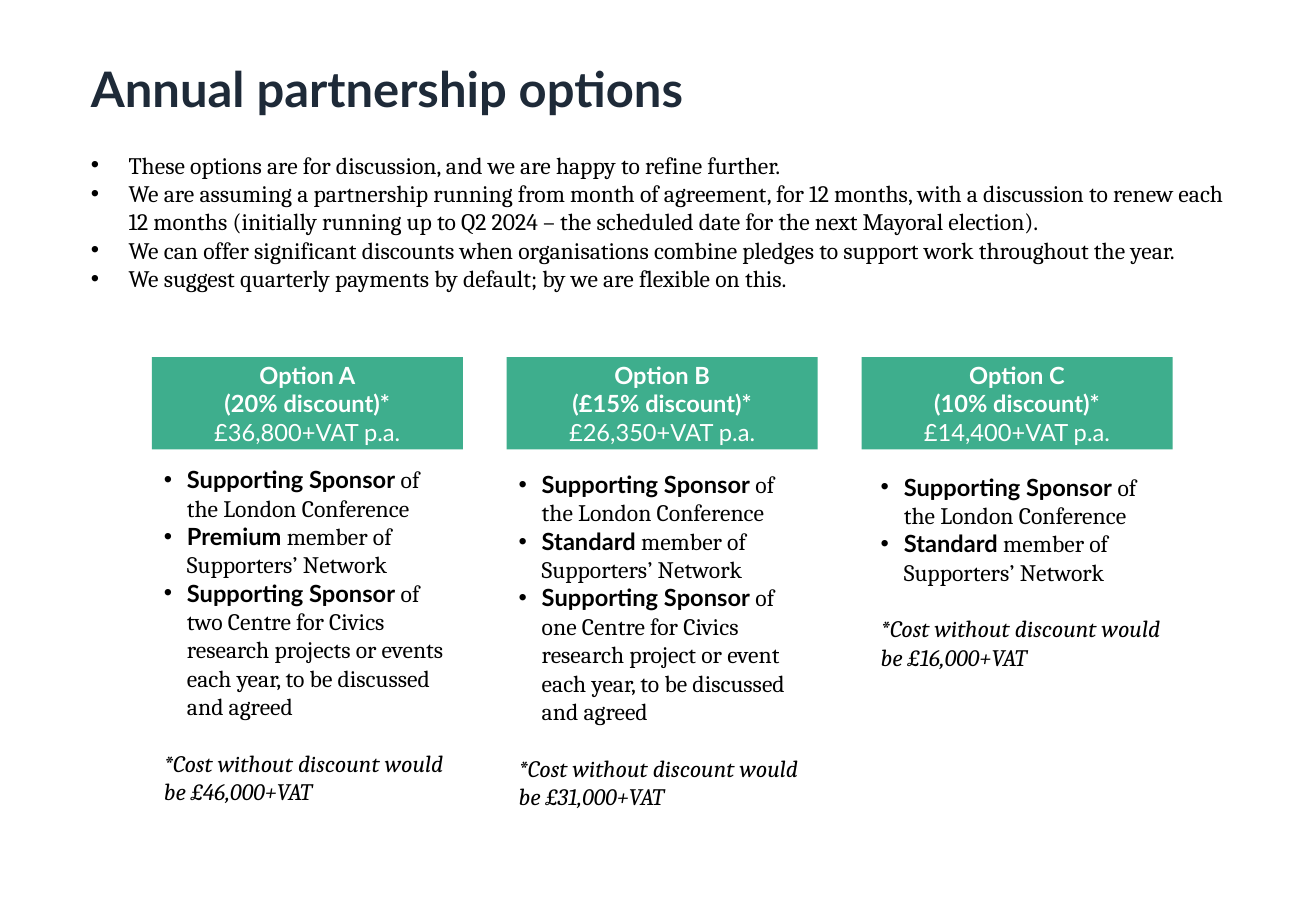
from pptx import Presentation
from pptx.dml.color import RGBColor as RGB
from pptx.enum.shapes import MSO_SHAPE as Shape
from pptx.enum.text import MSO_ANCHOR as Anchor, MSO_AUTO_SIZE as Fit, PP_ALIGN as Align
from pptx.oxml.ns import qn
from pptx.util import Inches, Pt

HEAD, BODY = "Lato", "Cambria"
GREEN, NAVY, BLACK, WHITE = "3EAE8D", "1E2A38", "000000", "FFFFFF"

TERMS = [
    "These options are for discussion, and we are happy to refine further.",
    "We are assuming a partnership running from month of agreement, for 12 months, "
    "with a discussion to renew each 12 months (initially running up to Q2 2024 – "
    "the scheduled date for the next Mayoral election).",
    "We can offer significant discounts when organisations combine pledges to "
    "support work throughout the year.",
    "We suggest quarterly payments by default; by we are flexible on this.",
]
OPTIONS = [
    ("Option A", "(20% discount)*", "£36,800", "£46,000", "Premium",
     "two Centre for Civics research projects or events", 1.25, 3.78, 2.93),
    ("Option B", "(£15% discount)*", "£26,350", "£31,000", "Standard",
     "one Centre for Civics research project or event", 4.17, 3.82, 2.93),
    ("Option C", "(10% discount)*", "£14,400", "£16,000", "Standard",
     "", 7.15, 3.84, 1.75),
]


def color(code):
    """Turn a hex string into a colour."""
    return RGB.from_string(code)


def add_run(para, text, face=BODY, size=14, ink=BLACK, bold=False, italic=False):
    """Add one styled run to a paragraph."""
    run = para.add_run()
    run.text = text
    font = run.font
    font.name, font.size, font.bold, font.italic = face, Pt(size), bold, italic
    font.color.rgb = color(ink)


def next_para(frame):
    """Return the empty first paragraph, or a new one."""
    first = frame.paragraphs[0]
    return frame.add_paragraph() if first.runs else first


def add_bullet(frame, indent):
    """Start a paragraph with a hanging bullet."""
    para = next_para(frame)
    props = para._p.get_or_add_pPr()
    props.set("marL", str(Inches(indent)))
    props.set("indent", str(-Inches(indent)))
    font = props.makeelement(qn("a:buFont"), {"typeface": "Arial"})
    mark = props.makeelement(qn("a:buChar"), {"char": "•"})
    props.extend([font, mark])
    return para


def add_box(slide, left, top, width, height):
    """Add a wrapping text box and return its frame."""
    box = slide.shapes.add_textbox(Inches(left), Inches(top), Inches(width), Inches(height))
    frame = box.text_frame
    frame.word_wrap = True
    return frame


def add_title(slide, text):
    """Add the slide heading."""
    frame = add_box(slide, 0.65, 0.4, 7.63, 0.61)
    frame.vertical_anchor = Anchor.MIDDLE
    para = next_para(frame)
    para.line_spacing = 1.07
    add_run(para, text, HEAD, 29, NAVY, True)


def add_terms(slide):
    """Add the list of general terms."""
    frame = add_box(slide, 0.65, 1.19, 9.66, 1.28)
    frame.auto_size = Fit.SHAPE_TO_FIT_TEXT
    for term in TERMS:
        add_run(add_bullet(frame, 0.31), term)


def add_banner(slide, left, lines):
    """Add a green header whose last line is not bold."""
    box = slide.shapes.add_shape(
        Shape.RECTANGLE, Inches(left), Inches(2.94), Inches(2.56), Inches(0.76))
    box.shadow.inherit = False
    box.fill.solid()
    box.fill.fore_color.rgb = color(GREEN)
    box.line.fill.background()
    frame = box.text_frame
    frame.word_wrap = True
    frame.vertical_anchor = Anchor.MIDDLE
    for line in lines:
        para = next_para(frame)
        para.alignment = Align.CENTER
        add_run(para, line, HEAD, ink=WHITE, bold=line != lines[-1])


def add_offer(slide, left, top, height, perks, note):
    """Add the perks of an option and its cost note."""
    frame = add_box(slide, left, top, 2.5, height)
    frame.auto_size = Fit.SHAPE_TO_FIT_TEXT
    for lead, rest in perks:
        para = add_bullet(frame, 0.19)
        add_run(para, lead, HEAD, bold=True)
        add_run(para, rest)
    para = next_para(frame)
    para.space_before = Pt(16.8)
    add_run(para, note, italic=True)


def main():
    """Build and save the slide."""
    deck = Presentation()
    deck.slide_width, deck.slide_height = Inches(10.83), Inches(7.5)
    slide = deck.slides.add_slide(deck.slide_layouts[6])
    add_title(slide, "Annual partnership options")
    add_terms(slide)
    for i, (name, saving, price, full, tier, work, left, top, height) in enumerate(OPTIONS):
        add_banner(slide, 1.25 + 2.92 * i, [name, saving, f"{price}+VAT p.a."])
        perks = [("Supporting Sponsor ", "of the London Conference"),
                 (tier, " member of Supporters’ Network")]
        if work:
            perks.append(("Supporting Sponsor ",
                          f"of {work} each year, to be discussed and agreed"))
        add_offer(slide, left, top, height, perks,
                  f"*Cost without discount would be {full}+VAT")
    deck.save("out.pptx")


if __name__ == "__main__":
    main()
